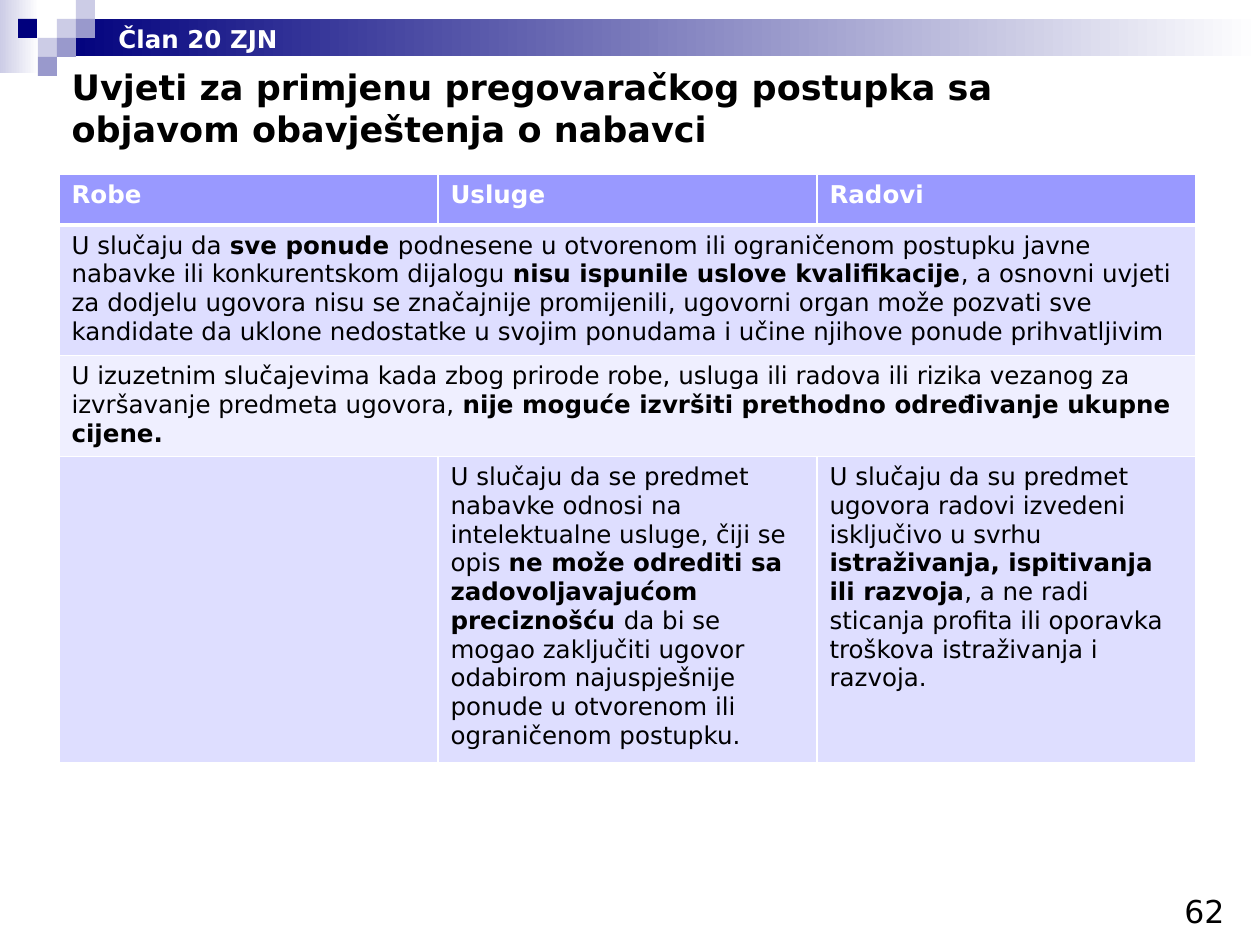
from dataclasses import dataclass

from lxml.etree import SubElement
from pptx import Presentation
from pptx.dml.color import RGBColor
from pptx.enum.shapes import MSO_SHAPE
from pptx.enum.text import MSO_ANCHOR, MSO_AUTO_SIZE, PP_ALIGN
from pptx.oxml.ns import qn
from pptx.util import Emu, Pt


@dataclass(frozen=True)
class Theme:
    font: str = "DejaVu Sans"
    black: str = "000000"
    white: str = "FFFFFF"
    navy: str = "00007D"
    mid: str = "9999CC"
    pale: str = "CCCCE6"
    head: str = "9999FF"
    band: str = "DEDEFF"
    light: str = "EFEFFF"
    title: int = 20
    body: int = 14
    page: int = 18


THEME = Theme()
SCALE = 914400 / 126
TILE = 19
TILES = [
    (57, 19, THEME.pale), (76, 0, THEME.pale), (76, 19, THEME.mid),
    (38, 38, THEME.pale), (18, 19, THEME.navy), (57, 38, THEME.mid),
    (38, 57, THEME.mid),
]
HEADS = ["Robe", "Usluge", "Radovi"]
WIDE = [
    "U slučaju da *sve ponude *podnesene u otvorenom ili ograničenom postupku "
    "javne nabavke ili konkurentskom dijalogu *nisu ispunile uslove "
    "kvalifikacije*, a osnovni uvjeti za dodjelu ugovora nisu se značajnije "
    "promijenili, ugovorni organ može pozvati sve kandidate da uklone "
    "nedostatke u svojim ponudama i učine njihove ponude prihvatljivim",
    "U izuzetnim slučajevima kada zbog prirode robe, usluga ili radova ili "
    "rizika vezanog za izvršavanje predmeta ugovora, *nije moguće izvršiti "
    "prethodno određivanje ukupne cijene.*",
]
LAST = [
    "",
    "U slučaju da se predmet nabavke odnosi na intelektualne usluge, čiji se "
    "opis *ne može odrediti sa zadovoljavajućom preciznošću *da bi se mogao "
    "zaključiti ugovor odabirom najuspješnije ponude u otvorenom ili "
    "ograničenom postupku.",
    "U slučaju da su predmet ugovora radovi izvedeni isključivo u svrhu "
    "*istraživanja, ispitivanja ili razvoja*, a ne radi sticanja profita ili "
    "oporavka troškova istraživanja i razvoja.",
]
ROWS = [(HEADS, THEME.head), (WIDE[:1], THEME.band),
        (WIDE[1:], THEME.light), (LAST, THEME.band)]
HEIGHTS = [51, 130, 101, 306]


def px(size):
    return Emu(round(size * SCALE))


def rgb(code):
    return RGBColor.from_string(code)


def write(frame, text, size=THEME.body, color=THEME.black, bold=False):
    para = frame.paragraphs[0]
    para.alignment = PP_ALIGN.LEFT
    for i, part in enumerate(text.split("*")):
        if part:
            run = para.add_run()
            run.text = part
            font = run.font
            font.name, font.size = THEME.font, Pt(size)
            font.bold = bold or i % 2 == 1
            font.color.rgb = rgb(color)


def block(slide, left, top, width, height, *colors):
    shape = slide.shapes.add_shape(
        MSO_SHAPE.RECTANGLE, px(left), px(top), px(width), px(height))
    shape.shadow.inherit = False
    shape.line.fill.background()
    if len(colors) == 1:
        shape.fill.solid()
        shape.fill.fore_color.rgb = rgb(colors[0])
    else:
        shape.fill.gradient()
        shape.fill.gradient_angle = 0
        for stop, color in zip(shape.fill.gradient_stops, colors):
            stop.color.rgb = rgb(color)


def label(slide, text, left, top, width, height, **style):
    box = slide.shapes.add_textbox(px(left), px(top), px(width), px(height))
    box.text_frame.word_wrap = False
    box.text_frame.auto_size = MSO_AUTO_SIZE.SHAPE_TO_FIT_TEXT
    write(box.text_frame, text, **style)


def title(slide, text, left, top, width, height):
    shape = slide.shapes.title
    shape.left, shape.top = px(left), px(top)
    shape.width, shape.height = px(width), px(height)
    frame = shape.text_frame
    frame.word_wrap = True
    frame.auto_size = MSO_AUTO_SIZE.SHAPE_TO_FIT_TEXT
    frame.vertical_anchor = MSO_ANCHOR.TOP
    write(frame, text, size=THEME.title, bold=True)


def border(cell, **sides):
    props = cell._tc.get_or_add_tcPr()
    for side in "LRTB":
        line = SubElement(props, qn(f"a:ln{side}"), w=str(Pt(sides.get(side, 1))))
        fill = SubElement(line, qn("a:solidFill"))
        SubElement(fill, qn("a:srgbClr"), val=THEME.white)


def table(slide, left, top, width):
    cols = len(HEADS)
    grid = slide.shapes.add_table(
        len(ROWS), cols, px(left), px(top), px(width), px(sum(HEIGHTS))).table
    for r, (texts, color) in enumerate(ROWS):
        grid.rows[r].height = px(HEIGHTS[r])
        if len(texts) == 1:
            grid.cell(r, 0).merge(grid.cell(r, cols - 1))
        for c in range(cols):
            cell = grid.cell(r, c)
            border(cell, T=3 if r == 1 else 1, B=3 if r == 0 else 1)
            cell.fill.solid()
            cell.fill.fore_color.rgb = rgb(color)
        for c, text in enumerate(texts):
            write(grid.cell(r, c).text_frame, text, bold=r == 0,
                  color=THEME.white if r == 0 else THEME.black)


def main():
    deck = Presentation()
    deck.slide_width, deck.slide_height = px(1260), px(945)
    slide = deck.slides.add_slide(deck.slide_layouts[5])
    block(slide, 0, 0, 39, 73, THEME.pale, THEME.white)
    block(slide, 57, 19, 1203, 37, THEME.navy, THEME.white)
    for left, top, color in TILES:
        block(slide, left, top, TILE, TILE, color)
    label(slide, "62", 1172, 886, 81, 50, size=THEME.page)
    title(slide, "Uvjeti za primjenu pregovaračkog postupka sa "
          "objavom obavještenja o nabavci", 59, 59, 988, 97)
    label(slide, "Član 20 ZJN", 106, 18, 190, 43, color=THEME.white, bold=True)
    table(slide, 59, 174, 1137)
    deck.save("out.pptx")


if __name__ == "__main__":
    main()
